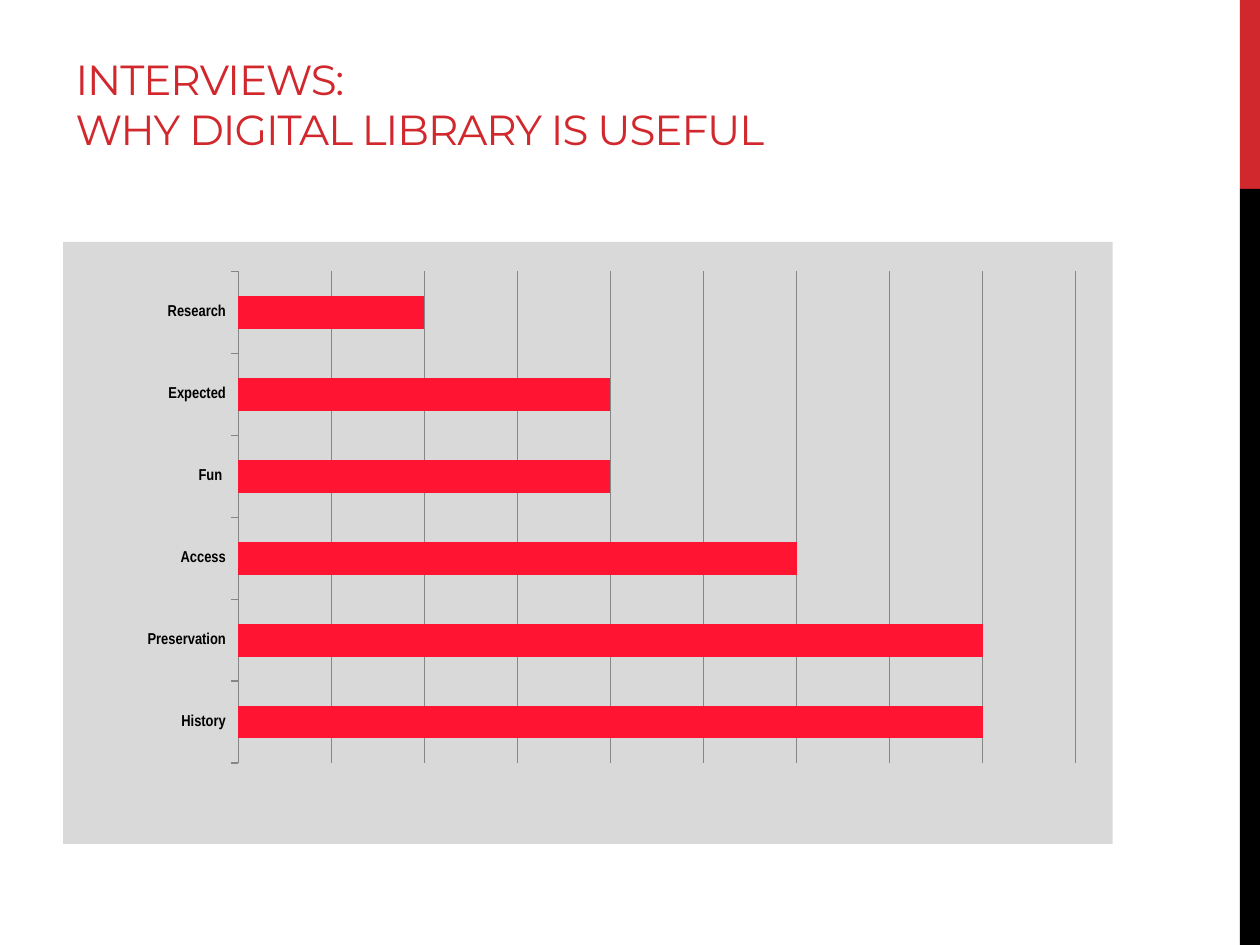
"""Build the interview results slide with its stacked bar chart."""
import dataclasses
import typing

import pptx
import pptx.chart.data
import pptx.dml.color
import pptx.enum.chart
import pptx.enum.shapes
import pptx.enum.text
import pptx.oxml
import pptx.oxml.ns
import pptx.util

WIDTH = pptx.util.Inches(10)
HEIGHT = pptx.util.Inches(7.5)
RED, BLACK, BAR_RED, PANEL, GRID = "D1282E", "000000", "FF1531", "D9D9D9", "868686"
ANSWERS = {
    "History": 100,
    "Preservation": 100,
    "Access": 75,
    "Fun ": 50,
    "Expected": 50,
    "Research": 25,
}
PLOT_SHARES = {"x": 0.167, "y": 0.049, "w": 0.798, "h": 0.817}


@dataclasses.dataclass
class Area:
    """Rectangle given as shares of the slide's width and height."""

    left: float
    top: float
    width: float
    height: float

    def lengths(self) -> tuple[int, int, int, int]:
        """Return left, top, width and height in slide units."""
        return (
            round(self.left * WIDTH),
            round(self.top * HEIGHT),
            round(self.width * WIDTH),
            round(self.height * HEIGHT),
        )


@dataclasses.dataclass
class Band:
    """Coloured block of the stripe on the right edge."""

    area: Area
    color: str


BANDS = [
    Band(Area(0.984, 0, 0.016, 0.2), RED),
    Band(Area(0.984, 0.2, 0.016, 0.8), BLACK),
]
TITLE_AREA = Area(0.05, 0.023, 0.833, 0.2)
CHART_AREA = Area(0.05, 0.256, 0.833, 0.637)


def color_of(value: str) -> pptx.dml.color.RGBColor:
    """Turn a hex string into a colour."""
    return pptx.dml.color.RGBColor.from_string(value)


def apply_format(target: typing.Any, values: dict[str, typing.Any]) -> None:
    """Set every named attribute on the target."""
    for name, value in values.items():
        setattr(target, name, value)


def format_font(font: typing.Any, name: str, size: float, color: str, bold: bool = False) -> None:
    """Set typeface, size, weight and colour of a font."""
    apply_format(font, {"name": name, "size": pptx.util.Pt(size), "bold": bold})
    font.color.rgb = color_of(color)


def fill_solid(target: typing.Any, color: str) -> None:
    """Give the target a plain fill."""
    target.fill.solid()
    target.fill.fore_color.rgb = color_of(color)


def draw_band(slide: typing.Any, band: Band) -> None:
    """Draw one block of the edge stripe."""
    shape = slide.shapes.add_shape(
        pptx.enum.shapes.MSO_SHAPE.RECTANGLE, *band.area.lengths()
    )
    shape.shadow.inherit = False
    fill_solid(shape, band.color)
    shape.line.fill.background()


def write_title(slide: typing.Any, lines: list[str]) -> None:
    """Place the title and write its lines."""
    title = slide.shapes.title
    apply_format(title, dict(zip(("left", "top", "width", "height"), TITLE_AREA.lengths())))
    frame = title.text_frame
    apply_format(frame, {
        "word_wrap": True,
        "auto_size": pptx.enum.text.MSO_AUTO_SIZE.NONE,
        "vertical_anchor": pptx.enum.text.MSO_ANCHOR.BOTTOM,
        "margin_bottom": pptx.util.Inches(0.45),
    })
    frame.text = "\v".join(lines)
    paragraph = frame.paragraphs[0]
    paragraph.alignment = pptx.enum.text.PP_ALIGN.LEFT
    for run in paragraph.runs:
        format_font(run.font, "Montserrat", 24, RED)
        run.font._element.set("spc", "-60")


def place_plot(chart: typing.Any) -> None:
    """Fix the inner plot area and fill the chart panel."""
    namespace = pptx.oxml.ns.nsdecls("c", "a")
    modes = "".join(f'<c:{key}Mode val="edge"/>' for key in "xy")
    shares = "".join(f'<c:{key} val="{share}"/>' for key, share in PLOT_SHARES.items())
    layout = pptx.oxml.parse_xml(
        f'<c:layout {namespace}><c:manualLayout><c:layoutTarget val="inner"/>'
        f"{modes}{shares}</c:manualLayout></c:layout>"
    )
    panel = pptx.oxml.parse_xml(
        f'<c:spPr {namespace}><a:solidFill><a:srgbClr val="{PANEL}"/></a:solidFill>'
        "<a:ln><a:noFill/></a:ln></c:spPr>"
    )
    chart_element = chart._chartSpace.find(pptx.oxml.ns.qn("c:chart"))
    plot_area = chart_element.find(pptx.oxml.ns.qn("c:plotArea"))
    for old_layout in plot_area.findall(pptx.oxml.ns.qn("c:layout")):
        plot_area.remove(old_layout)
    plot_area.insert(0, layout)
    chart_element.addnext(panel)


def draw_chart(slide: typing.Any) -> None:
    """Add the bar chart of interview answers."""
    data = pptx.chart.data.CategoryChartData()
    data.categories = list(ANSWERS)
    data.add_series("Series 1", list(ANSWERS.values()))
    chart = slide.shapes.add_chart(
        pptx.enum.chart.XL_CHART_TYPE.BAR_STACKED, *CHART_AREA.lengths(), data
    ).chart
    apply_format(chart, {"has_legend": False, "has_title": False})
    format_font(chart.font, "Arial", 10, BLACK)
    plot = chart.plots[0]
    apply_format(plot, {"gap_width": 150, "overlap": 100, "vary_by_categories": False})
    fill_solid(plot.series[0].format, BAR_RED)
    categories, values = chart.category_axis, chart.value_axis
    categories.major_tick_mark = pptx.enum.chart.XL_TICK_MARK.OUTSIDE
    format_font(categories.tick_labels.font, "Arial Narrow", 9, BLACK, bold=True)
    apply_format(values, {
        "minimum_scale": 0,
        "maximum_scale": 112.5,
        "major_unit": 12.5,
        "has_major_gridlines": True,
        "visible": False,
    })
    for line in (categories.format.line, values.major_gridlines.format.line):
        line.color.rgb = color_of(GRID)
        line.width = pptx.util.Pt(0.75)
    place_plot(chart)


def main() -> None:
    """Build and save the presentation."""
    presentation = pptx.Presentation()
    apply_format(presentation, {"slide_width": WIDTH, "slide_height": HEIGHT})
    slide = presentation.slides.add_slide(presentation.slide_layouts[5])
    for band in BANDS:
        draw_band(slide, band)
    write_title(slide, ["INTERVIEWS: ", "WHY DIGITAL LIBRARY IS USEFUL"])
    draw_chart(slide)
    presentation.save("out.pptx")


if __name__ == "__main__":
    main()
